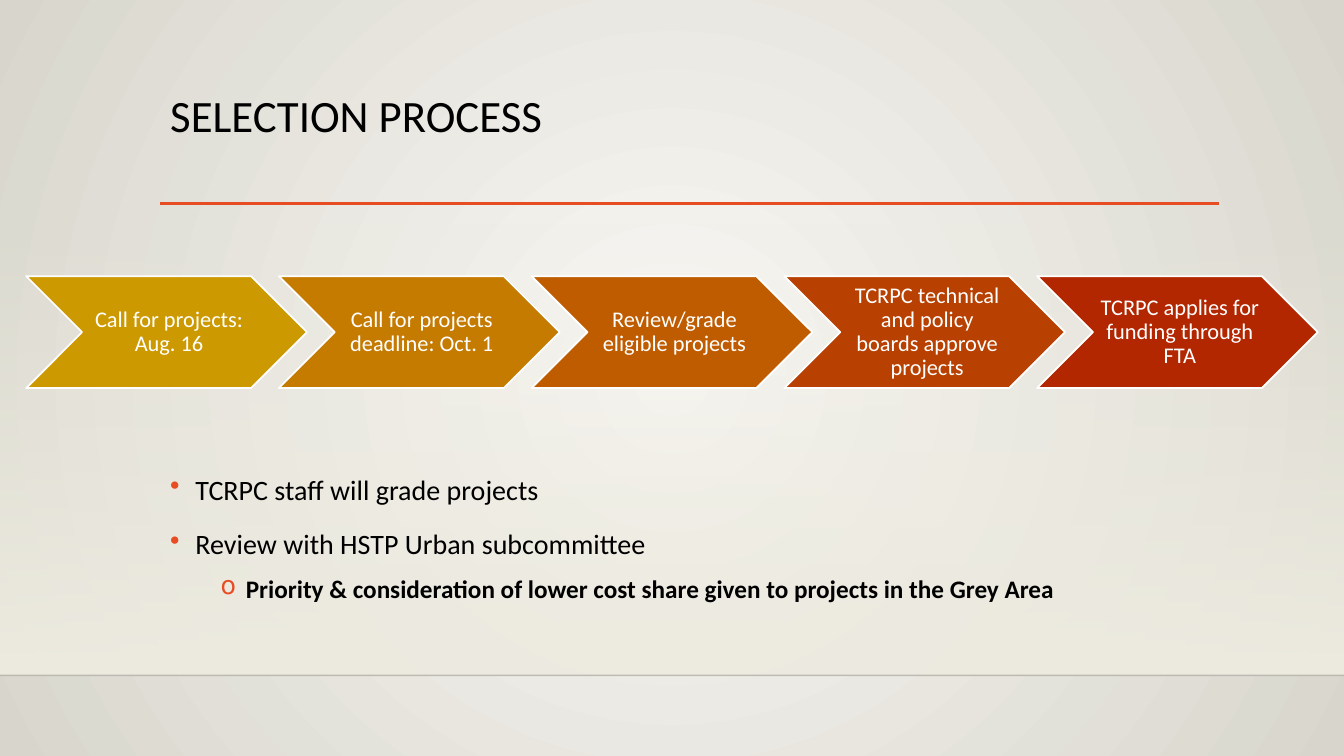
from dataclasses import dataclass

from lxml.etree import SubElement
from pptx import Presentation
from pptx.dml.color import RGBColor
from pptx.enum.shapes import MSO_CONNECTOR, MSO_SHAPE
from pptx.enum.text import MSO_ANCHOR, PP_ALIGN
from pptx.oxml import parse_xml
from pptx.oxml.ns import nsdecls, qn
from pptx.util import Inches, Pt


@dataclass(frozen=True)
class Theme:
    font: str = "Calibri"
    ink: str = "000000"
    paper: str = "FFFFFF"
    accent: str = "E84C22"
    center: str = "F9F8F5"
    edge: str = "D8D6CC"
    wall: str = "EEECE1"
    steps: tuple = ("CC9900", "C57A00", "BF5C00", "B84000", "B22600")
    title_size: int = 32
    body_sizes: tuple = (20, 18)
    step_size: int = 16


THEME = Theme()
WIDTH, HEIGHT = 13.33, 7.5
MARGIN, CONTENT_WIDTH = 1.59, 10.5
FLOOR = 6.7
RADIAL = ('<a:path path="circle"><a:fillToRect l="50000" t="50000" '
          'r="50000" b="50000"/></a:path>')
DOWNWARD = '<a:lin ang="5400000" scaled="0"/>'

STEPS = (
    "Call for projects: Aug. 16",
    "Call for projects deadline: Oct. 1",
    "Review/grade eligible projects",
    "TCRPC technical and policy boards approve projects",
    "TCRPC applies for funding through FTA",
)
POINTS = (
    (0, "TCRPC staff will grade projects"),
    (0, "Review with HSTP Urban subcommittee"),
    (1, "Priority & consideration of lower cost share given to "
        "projects in the Grey Area"),
)


def color(code):
    return RGBColor.from_string(code)


def inches(box):
    return [Inches(length) for length in box]


def paint_gradient(properties, first, last, direction, first_alpha=100):
    """Replace the solid fill in the given properties by a two-stop gradient."""
    gradient = parse_xml(
        f'<a:gradFill {nsdecls("a")} rotWithShape="1"><a:gsLst>'
        f'<a:gs pos="0"><a:srgbClr val="{first}">'
        f'<a:alpha val="{first_alpha * 1000}"/></a:srgbClr></a:gs>'
        f'<a:gs pos="100000"><a:srgbClr val="{last}"/></a:gs>'
        f'</a:gsLst>{direction}</a:gradFill>')
    properties.replace(properties.find(qn("a:solidFill")), gradient)


def style_text(para, size, code, bold=False):
    for span in para.runs:
        span.font.name = THEME.font
        span.font.size = Pt(size)
        span.font.bold = bold
        span.font.color.rgb = color(code)


def add_rule(page, left, top, width, code, weight, alpha=100):
    """Draw a horizontal line."""
    rule = page.shapes.add_connector(
        MSO_CONNECTOR.STRAIGHT, *inches((left, top, left + width, top)))
    rule.line.color.rgb = color(code)
    rule.line.width = Pt(weight)
    properties = rule.element.spPr
    SubElement(properties, qn("a:effectLst"))
    if alpha < 100:
        tint = next(properties.iter(qn("a:srgbClr")))
        SubElement(tint, qn("a:alpha")).set("val", str(alpha * 1000))


def add_backdrop(page):
    page.background.fill.solid()
    paint_gradient(next(page.element.iter(qn("p:bgPr"))),
                   THEME.center, THEME.edge, RADIAL)
    top = 2.21
    wall = page.shapes.add_shape(
        MSO_SHAPE.RECTANGLE, *inches((0, top, WIDTH, FLOOR - top)))
    wall.shadow.inherit = False
    wall.line.fill.background()
    wall.fill.solid()
    paint_gradient(wall.element.spPr, THEME.wall, THEME.wall, DOWNWARD,
                   first_alpha=0)
    add_rule(page, 0, FLOOR, WIDTH, THEME.ink, 1, alpha=20)


def add_title(page, box):
    frame = page.shapes.add_textbox(*inches(box)).text_frame
    frame.word_wrap = True
    frame.text = "SELECTION PROCESS"
    para = frame.paragraphs[0]
    para.line_spacing = 0.9
    style_text(para, THEME.title_size, THEME.ink)
    left, top, width, height = box
    add_rule(page, left, top + height, width, THEME.accent, 2.5)


def add_process(page, box):
    """Lay out the steps as chevrons that overlap by a tenth of their width."""
    left, top, width, height = box
    overlap = 0.1
    step_width = width / (len(STEPS) - overlap * (len(STEPS) - 1))
    pitch = step_width * (1 - overlap)
    for index, (label, code) in enumerate(zip(STEPS, THEME.steps)):
        step = page.shapes.add_shape(
            MSO_SHAPE.CHEVRON,
            *inches((left + index * pitch, top, step_width, height)))
        step.shadow.inherit = False
        step.fill.solid()
        step.fill.fore_color.rgb = color(code)
        step.line.color.rgb = color(THEME.paper)
        step.line.width = Pt(1.25)
        frame = step.text_frame
        frame.word_wrap = True
        frame.vertical_anchor = MSO_ANCHOR.MIDDLE
        frame.margin_left = Inches(0.07)
        frame.margin_right = frame.margin_top = frame.margin_bottom = Inches(0.02)
        frame.text = label
        para = frame.paragraphs[0]
        para.alignment = PP_ALIGN.CENTER
        para.line_spacing = 0.9
        style_text(para, THEME.step_size, THEME.paper)


def add_bullet(para, level):
    properties = para._p.get_or_add_pPr()
    properties.set("marL", str(Inches((0.25, 0.75)[level])))
    properties.set("indent", str(Inches(-0.25)))
    tint = SubElement(properties, qn("a:buClr"))
    SubElement(tint, qn("a:srgbClr")).set("val", THEME.accent)
    SubElement(properties, qn("a:buChar")).set("char", "•o"[level])


def add_points(page, box):
    frame = page.shapes.add_textbox(*inches(box)).text_frame
    frame.word_wrap = True
    frame.text = "\n".join(text for _, text in POINTS)
    for index, (para, (level, _)) in enumerate(zip(frame.paragraphs, POINTS)):
        add_bullet(para, level)
        para.level = level
        para.line_spacing = 1.2
        para.space_before = Pt((10, 5)[level] if index else 0)
        style_text(para, THEME.body_sizes[level], THEME.ink, bold=level == 1)


def main():
    deck = Presentation()
    deck.slide_width, deck.slide_height = inches((WIDTH, HEIGHT))
    page = deck.slides.add_slide(deck.slide_layouts[6])
    add_backdrop(page)
    add_title(page, (MARGIN, 0.88, CONTENT_WIDTH, 1.14))
    add_points(page, (MARGIN, 4.57, CONTENT_WIDTH, 1.96))
    add_process(page, (0.26, 2.74, 12.81, 1.11))
    deck.save("out.pptx")


if __name__ == "__main__":
    main()
